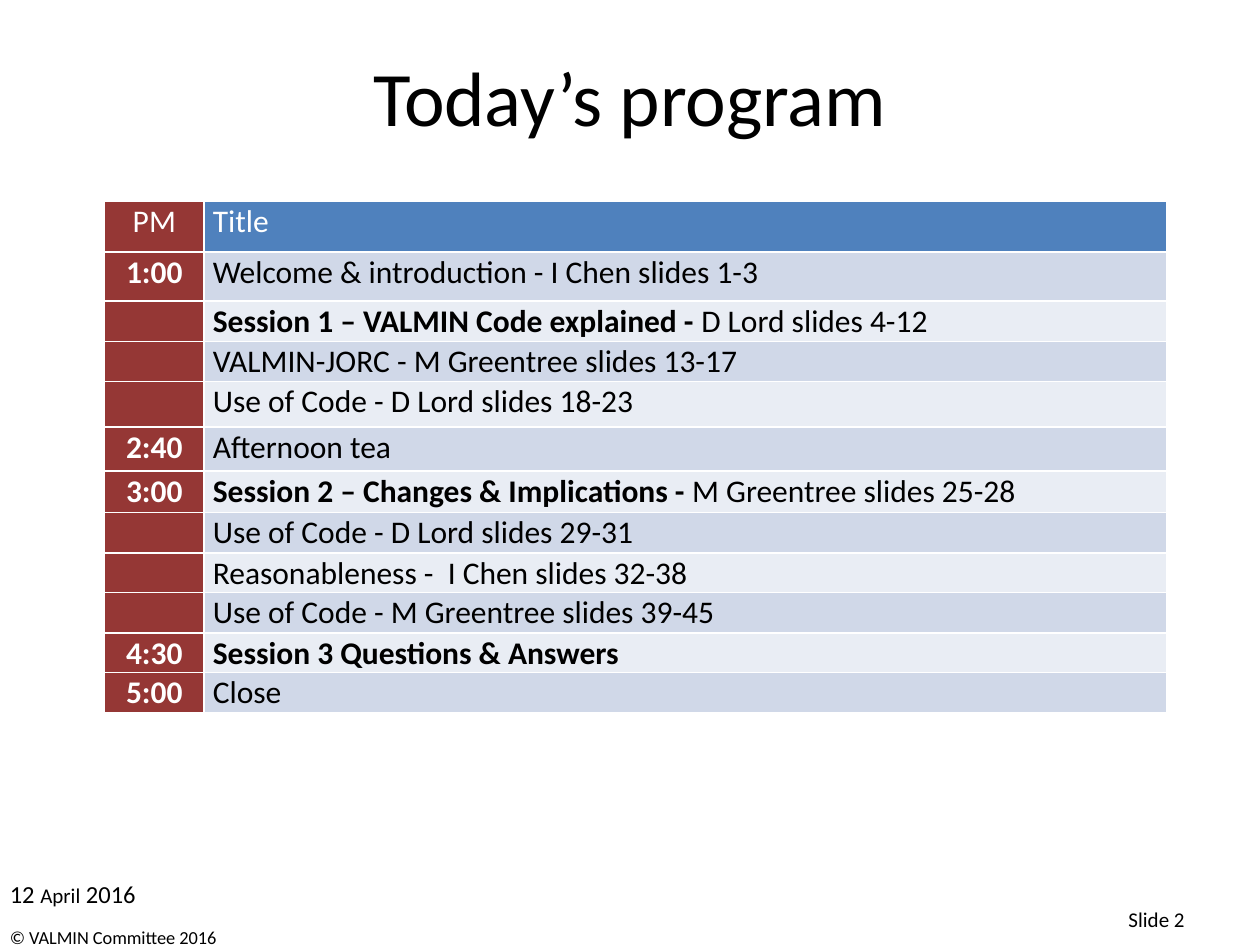
from pptx import Presentation
from pptx.dml.color import RGBColor
from pptx.enum.text import MSO_ANCHOR, PP_ALIGN
from pptx.util import Inches, Pt

LEFT, MID, RIGHT = PP_ALIGN.LEFT, PP_ALIGN.CENTER, PP_ALIGN.RIGHT
TOP, CENTER = MSO_ANCHOR.TOP, MSO_ANCHOR.MIDDLE
HUES = {"ink": "000000", "paper": "FFFFFF", "time": "953735",
        "head": "4F81BD", "dark": "D0D8E8", "pale": "E9EDF4"}
PROGRAM = [
    (4, "PM", "", "Title"),
    (3.9, "1:00", "", "Welcome & introduction - I Chen slides 1-3"),
    (3.2, "", "Session 1 – VALMIN Code explained -", " D Lord slides 4-12"),
    (3.2, "", "", "VALMIN-JORC - M Greentree slides 13-17"),
    (3.6, "", "", "Use of Code - D Lord slides 18-23"),
    (3.5, "2:40", "", "Afternoon tea"),
    (3.3, "3:00", "Session 2 – Changes & Implications -", " M Greentree slides 25-28"),
    (3.2, "", "", "Use of Code - D Lord slides 29-31"),
    (3.1, "", "", "Reasonableness -  I Chen slides 32-38"),
    (3.2, "", "", "Use of Code - M Greentree slides 39-45"),
    (3.1, "4:30", "Session 3 Questions & Answers", ""),
    (3.1, "5:00", "", "Close"),
]


class Deck:
    """Style and current slide, on a grid of 100 columns by 75 rows."""

    def __init__(self):
        self.show = Presentation()
        self.show.slide_width, self.show.slide_height = self.grid(100, 75)
        self.slide = self.show.slides.add_slide(self.show.slide_layouts[5])

    def grid(self, *units):
        return [Inches(unit / 10) for unit in units]

    def style(self, font, size, hue="ink", bold=False):
        font.name, font.size, font.bold = "Calibri", Pt(size), bold
        font.color.rgb = RGBColor.from_string(HUES[hue])

    def title(self, text, box):
        shape = self.slide.shapes.title
        shape.left, shape.top, shape.width, shape.height = self.grid(*box)
        frame = shape.text_frame
        frame.text, frame.vertical_anchor = text, CENTER
        para = frame.paragraphs[0]
        para.alignment = MID
        self.style(para.font, 44)

    def label(self, parts, box, align=LEFT, anchor=TOP):
        frame = self.slide.shapes.add_textbox(*self.grid(*box)).text_frame
        frame.word_wrap, frame.vertical_anchor = True, anchor
        para = frame.paragraphs[0]
        para.alignment = align
        for text, size in parts:
            run = para.add_run()
            run.text = text
            self.style(run.font, size)

    def cell(self, cell, fill, hue, parts, align=LEFT):
        cell.fill.solid()
        cell.fill.fore_color.rgb = RGBColor.from_string(HUES[fill])
        cell.margin_left, cell.margin_right, cell.margin_top, cell.margin_bottom = self.grid(0.7, 0.7, 0.1, 0)
        para = cell.text_frame.paragraphs[0]
        para.alignment = align
        self.style(para.font, 18, hue)
        for text, bold in parts:
            if text:
                run = para.add_run()
                run.text = text
                self.style(run.font, 18, hue, bold)

    def table(self, rows, left, top, wide):
        tall = sum(row[0] for row in rows)
        box = self.grid(left, top, sum(wide), tall)
        table = self.slide.shapes.add_table(len(rows), len(wide), *box).table
        table.horz_banding = False
        for col, width in zip(table.columns, self.grid(*wide)):
            col.width = width
        for i, (high, time, lead, text) in enumerate(rows):
            table.rows[i].height = Inches(high / 10)
            fill = ("dark" if i % 2 else "pale") if i else "head"
            self.cell(table.cell(i, 0), "time", "paper", [(time, i > 0)], MID)
            self.cell(table.cell(i, 1), fill, "ink" if i else "paper",
                      [(lead, True), (text, False)])


def main():
    deck = Deck()
    deck.title("Today’s program", (5, 2.1, 90, 11))
    deck.table(PROGRAM, 8.3, 16, (7.9, 76.4))
    deck.label([("12 ", 14), ("April", 12), (" 2016", 14)], (-0.2, 69.3, 24, 3.4))
    deck.label([("© VALMIN Committee 2016", 10.5)], (-0.2, 73, 31.7, 4))
    deck.label([("Slide 2", 12)], (81.5, 71.7, 13.5, 2.5), RIGHT, CENTER)
    deck.show.save("out.pptx")


if __name__ == "__main__":
    main()
